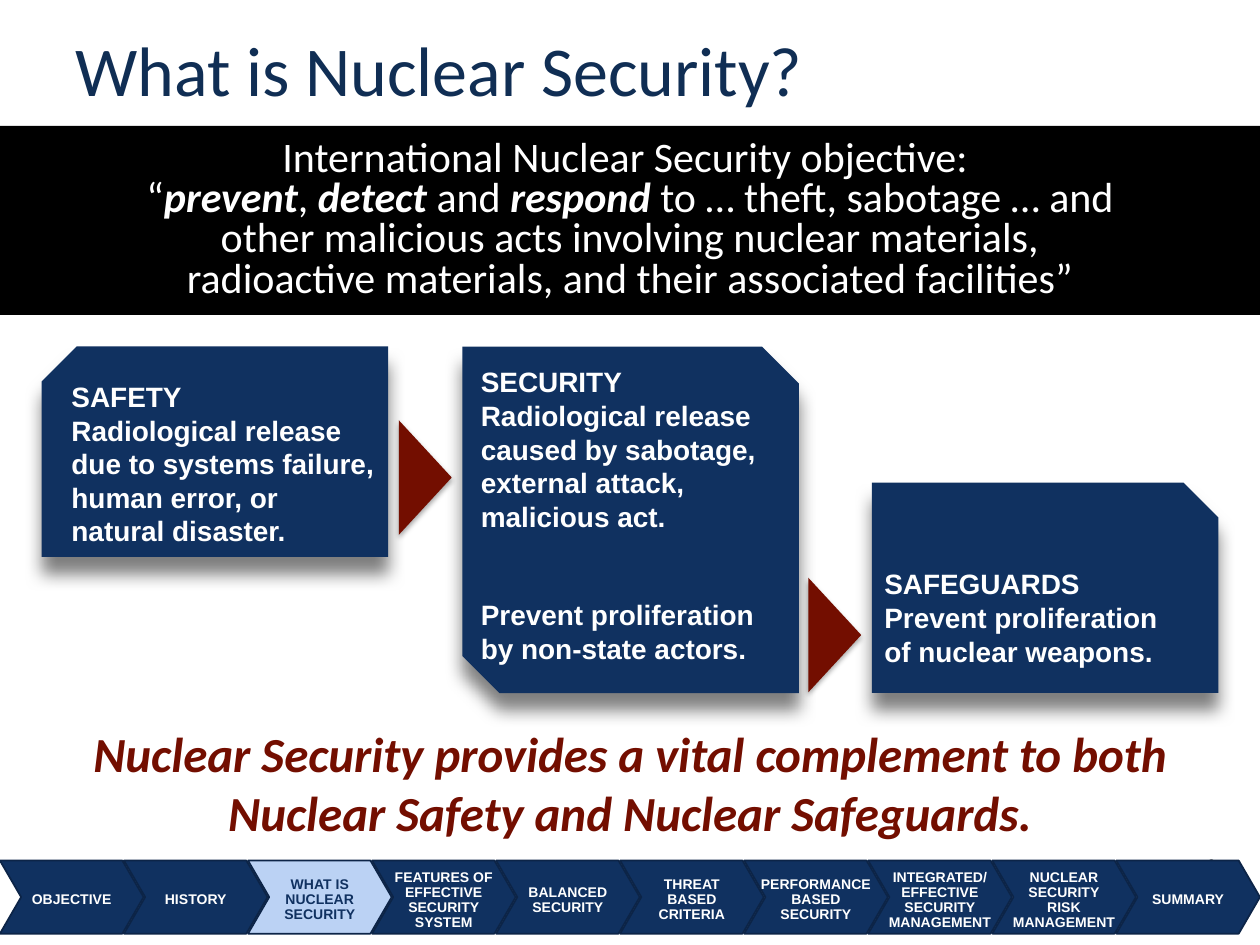
"""Build the slide on nuclear security, safety and safeguards."""
from lxml.etree import SubElement
from pptx import Presentation
from pptx.dml.color import RGBColor
from pptx.enum.shapes import MSO_SHAPE as SHAPE
from pptx.enum.text import MSO_ANCHOR as ANCHOR, PP_ALIGN as ALIGN
from pptx.oxml.ns import qn
from pptx.util import Inches, Pt

NAVY, PALE, RED, WHITE, BLACK = "103160", "BBD2F4", "730E00", "FFFFFF", "000000"


def rgb(value):
    return RGBColor.from_string(value)


def write(shape, lines, size, color, font="Calibri", align=ALIGN.LEFT, anchor=ANCHOR.MIDDLE,
          insets=(0.1, 0.05, 0.1, 0.05), wrap=True, bold=False, italic=False, spacing=None):
    frame = shape.text_frame
    frame.word_wrap = wrap
    frame.vertical_anchor = anchor
    frame.margin_left, frame.margin_top, frame.margin_right, frame.margin_bottom = map(Inches, insets)
    for index, line in enumerate(lines):
        paragraph = frame.add_paragraph() if index else frame.paragraphs[0]
        paragraph.alignment = align
        if spacing:
            paragraph.line_spacing = spacing
        for text, strong in [(line, False)] if isinstance(line, str) else line:
            run = paragraph.add_run()
            run.text = text
            run.font.name, run.font.size = font, Pt(size)
            run.font.bold, run.font.italic = bold or strong, italic or strong
            run.font.color.rgb = rgb(color)


prs = Presentation()
prs.slide_width, prs.slide_height = Inches(10), Inches(7.5)
shapes = prs.slides.add_slide(prs.slide_layouts[6]).shapes

title = shapes.add_textbox(Inches(0.5), Inches(0), Inches(9), Inches(1.08))
write(title, ["What is Nuclear Security?"], 40, "102E54")

page_number = shapes.add_textbox(Inches(9.08), Inches(6.73), Inches(0.67), Inches(0.28))
write(page_number, ["8"], 10.5, BLACK, align=ALIGN.RIGHT, anchor=ANCHOR.TOP)

objective = shapes.add_shape(SHAPE.RECTANGLE, Inches(0), Inches(1), Inches(10), Inches(1.5))
objective.shadow.inherit = False
objective.fill.solid()
objective.fill.fore_color.rgb = rgb(BLACK)
objective.line.fill.background()
write(objective, [
    "International Nuclear Security objective: ",
    [("“", False), ("prevent", True), (", ", False), ("detect", True), (" and ", False),
     ("respond", True), (" to … theft, sabotage … and", False)],
    "other malicious acts involving nuclear materials,",
    "radioactive materials, and their associated facilities”",
], 24, WHITE, align=ALIGN.CENTER, spacing=0.8)

conclusion = shapes.add_textbox(Inches(0), Inches(5.75), Inches(10), Inches(0.92))
write(conclusion, ["Nuclear Security provides a vital complement to both Nuclear Safety and Nuclear Safeguards."],
      28, RED, align=ALIGN.CENTER, bold=True, italic=True)

safety_lines = ["SAFETY", "Radiological release", "due to systems failure,", "human error, or", "natural disaster."]
security_lines = ["SECURITY", "Radiological release", "caused by sabotage,", "external attack,", "malicious act.",
                  "Prevent proliferation", "by non-state actors."]
safeguards_lines = ["SAFEGUARDS", "Prevent proliferation", "of nuclear weapons."]
cards = [
    (SHAPE.SNIP_1_RECTANGLE, 0.33, 2.75, 2.75, 1.67, safety_lines, ANCHOR.MIDDLE, (0.1, 0.05, 0.1, 0)),
    (SHAPE.SNIP_2_DIAG_RECTANGLE, 3.67, 2.75, 2.67, 2.75, security_lines, ANCHOR.TOP, (0, 0, 0, 0)),
    (SHAPE.SNIP_1_RECTANGLE, 6.92, 3.83, 2.75, 1.67, safeguards_lines, ANCHOR.BOTTOM, (0.1, 0.05, 0.1, 0.2)),
]
arrows = [(SHAPE.ISOSCELES_TRIANGLE, left, top, 0.91, 0.42, [], ANCHOR.MIDDLE, (0, 0, 0, 0))
          for left, top in [(2.92, 3.58), (6.17, 4.83)]]
drawn = []
for kind, left, top, width, height, lines, anchor, insets in cards + arrows:
    block = shapes.add_shape(kind, Inches(left), Inches(top), Inches(width), Inches(height))
    block.shadow.inherit = False
    block.fill.solid()
    block.fill.fore_color.rgb = rgb(NAVY if lines else RED)
    block.line.fill.background()
    if not lines:
        block.rotation = 90
    write(block, lines, 16, WHITE, "Arial", anchor=anchor, insets=insets, wrap=False, bold=True)
    alpha, blur, distance = (50, 10, 10) if lines else (35, 3.1, 1.8)
    effects = block._element.spPr.find(qn("a:effectLst"))
    shadow = SubElement(effects, qn("a:outerShdw"), blurRad=str(Pt(blur)), dist=str(Pt(distance)),
                        dir="5400000", algn="ctr", rotWithShape="0")
    tint = SubElement(shadow, qn("a:srgbClr"), val=BLACK)
    SubElement(tint, qn("a:alpha"), val=str(alpha * 1000))
    drawn.append(block)

safety, security = drawn[:2]
safety._element.spPr.xfrm.set("flipH", "1")
security.adjustments[0], security.adjustments[1] = 0, 0.11
security.text_frame.paragraphs[5].space_before = Pt(37)

steps = [
    ["OBJECTIVE"],
    ["HISTORY"],
    ["WHAT IS", "NUCLEAR", "SECURITY"],
    ["FEATURES OF", "EFFECTIVE", "SECURITY", "SYSTEM"],
    ["BALANCED", "SECURITY"],
    ["THREAT", "BASED", "CRITERIA"],
    ["PERFORMANCE", "BASED", "SECURITY"],
    ["INTEGRATED/", "EFFECTIVE", "SECURITY", "MANAGEMENT"],
    ["NUCLEAR", "SECURITY", "RISK", "MANAGEMENT"],
    ["SUMMARY"],
]
current, step_width = 2, 1.14
pitch = (10 - step_width) / (len(steps) - 1)
navigation = shapes.add_group_shape().shapes
for position, lines in reversed(list(enumerate(steps))):
    step = navigation.add_shape(SHAPE.CHEVRON, Inches(position * pitch), Inches(6.83),
                                Inches(step_width), Inches(0.58))
    step.adjustments[0] = 0.29
    step.shadow.inherit = False
    step.fill.solid()
    step.fill.fore_color.rgb = rgb(PALE if position == current else NAVY)
    step.line.color.rgb = rgb("0C2447")
    step.line.width = Pt(1)
    write(step, lines, 8, NAVY if position == current else WHITE, "Arial", ALIGN.CENTER,
          insets=(0.1, 0.05, 0.1, 0), wrap=False, bold=True, spacing=0.9)

prs.save("out.pptx")
